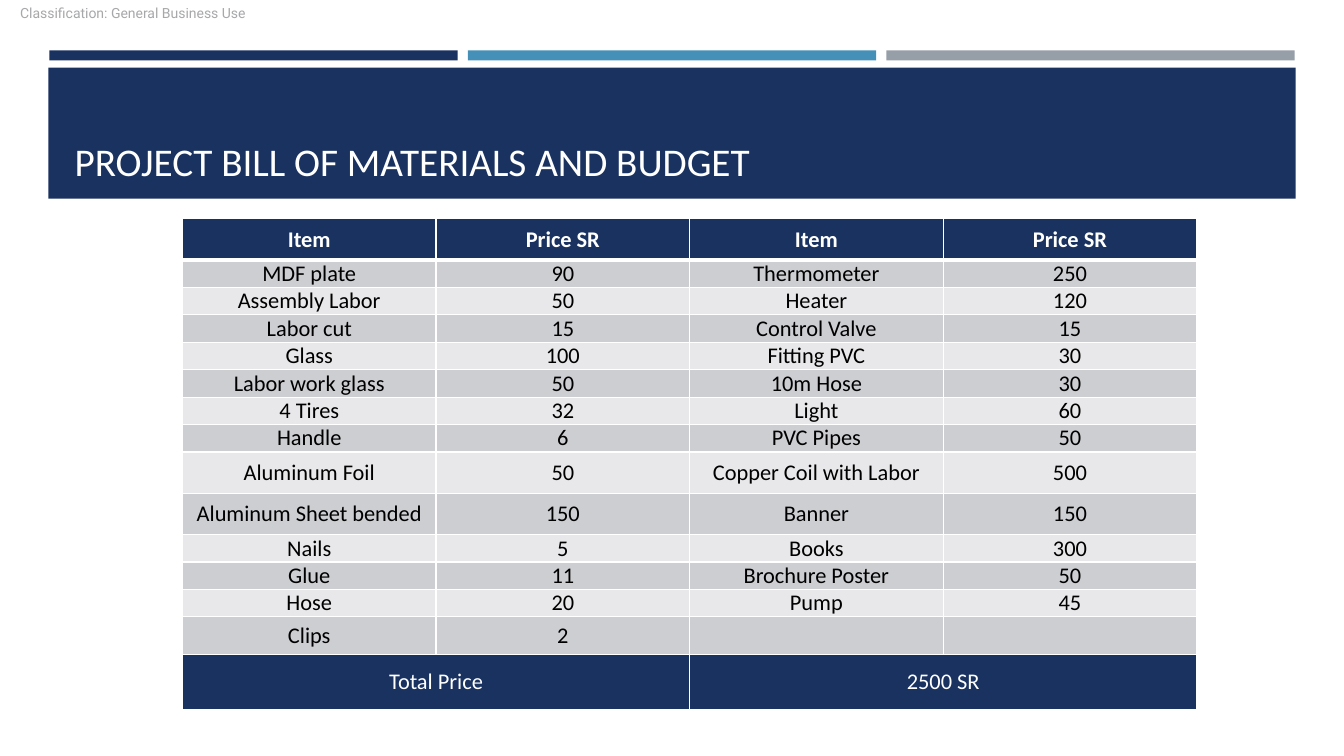
from lxml.etree import SubElement
from pptx import Presentation
from pptx.dml.color import RGBColor
from pptx.enum.shapes import MSO_SHAPE
from pptx.enum.text import MSO_ANCHOR, PP_ALIGN
from pptx.oxml.ns import qn
from pptx.util import Inches, Pt

COLORS = {
    "navy": "1A3260", "blue": "4590B8", "gray": "969FA7", "white": "FFFFFF",
    "black": "000000", "label": "A7A8AA", "dark_row": "CDCED2", "light_row": "E8E8EA",
}
HEADER = ["Item", "Price SR"] * 2
MATERIALS = [
    ("MDF plate", 90, "Thermometer", 250),
    ("Assembly Labor", 50, "Heater", 120),
    ("Labor cut", 15, "Control Valve", 15),
    ("Glass", 100, "Fitting PVC", 30),
    ("Labor work glass", 50, "10m Hose", 30),
    ("4 Tires", 32, "Light", 60),
    ("Handle", 6, "PVC Pipes", 50),
    ("Aluminum Foil", 50, "Copper Coil with Labor", 500),
    ("Aluminum Sheet bended", 150, "Banner", 150),
    ("Nails", 5, "Books", 300),
    ("Glue", 11, "Brochure Poster", 50),
    ("Hose", 20, "Pump", 45),
    ("Clips", 2, "", ""),
]
TOTAL = ("Total Price", "", "2500 SR", "")
ROW_HEIGHTS = [0.41] + [0.27] * 7 + [0.41] * 2 + [0.27] * 3 + [0.37, 0.55]


def rgb(name):
    """Return the named colour."""
    return RGBColor.from_string(COLORS[name])


def style_font(p, size, color, name="Calibri", bold=False):
    """Set the font of a whole paragraph."""
    p.font.name, p.font.size, p.font.bold = name, Pt(size), bold
    p.font.color.rgb = rgb(color)


def add_bar(s, left, top, width, height, color):
    """Add a plain filled rectangle."""
    sp = s.shapes.add_shape(MSO_SHAPE.RECTANGLE, Inches(left), Inches(top),
                            Inches(width), Inches(height))
    sp.shadow.inherit = False
    sp.fill.solid()
    sp.fill.fore_color.rgb = rgb(color)
    sp.line.fill.background()


def add_label(s, text):
    """Add the classification label in the top left corner."""
    tf = s.shapes.add_textbox(0, 0, Inches(2.67), Inches(0.26)).text_frame
    tf.word_wrap = True
    tf.margin_left = Inches(0.2)
    tf.margin_top = tf.margin_right = tf.margin_bottom = 0
    tf.vertical_anchor = MSO_ANCHOR.MIDDLE
    tf.text = text
    style_font(tf.paragraphs[0], 10, "label", "Roboto")


def set_title(s, text):
    """Place the title on top of its band."""
    sp = s.shapes.title
    sp.left, sp.top = Inches(0.64), Inches(0.77)
    sp.width, sp.height = Inches(12.06), Inches(1.11)
    tf = sp.text_frame
    tf.text = text
    tf.vertical_anchor = MSO_ANCHOR.BOTTOM
    p = tf.paragraphs[0]
    p.alignment = PP_ALIGN.LEFT
    style_font(p, 28, "white")
    sp.element.getparent().append(sp.element)


def set_borders(cell, widths):
    """Draw white cell borders, given widths in points by side."""
    tc_pr = cell._tc.get_or_add_tcPr()
    for i, (side, width) in enumerate(widths.items()):
        ln = SubElement(tc_pr, qn(f"a:ln{side}"), w=str(Pt(width)))
        fill = SubElement(ln, qn("a:solidFill"))
        SubElement(fill, qn("a:srgbClr"), val=COLORS["white"])
        tc_pr.insert(i, ln)


def fill_cell(cell, text, fill, color, bold, widths):
    """Write and format one table cell."""
    cell.text = str(text)
    cell.vertical_anchor = MSO_ANCHOR.MIDDLE
    cell.margin_left = cell.margin_right = Inches(0.06)
    cell.margin_top = cell.margin_bottom = 0
    p = cell.text_frame.paragraphs[0]
    p.alignment = PP_ALIGN.CENTER
    style_font(p, 16, color, bold=bold)
    cell.fill.solid()
    cell.fill.fore_color.rgb = rgb(fill)
    set_borders(cell, widths)


def add_budget_table(s):
    """Add the bill of materials with its header and total rows."""
    rows = [HEADER, *MATERIALS, TOTAL]
    last = len(rows) - 1
    table = s.shapes.add_table(len(rows), 4, Inches(1.81), Inches(2.17),
                               Inches(10.06), Inches(sum(ROW_HEIGHTS))).table
    for column in table.columns:
        column.width = Inches(2.515)
    for i, (row, height) in enumerate(zip(rows, ROW_HEIGHTS)):
        table.rows[i].height = Inches(height)
        banded = "dark_row" if i % 2 else "light_row"
        fill, color = ("navy", "white") if i in (0, last) else (banded, "black")
        widths = {"L": 1, "R": 1, "T": 3 if i == 1 else 1, "B": 3 if i == 0 else 1}
        for j, text in enumerate(row):
            fill_cell(table.cell(i, j), text, fill, color, i == 0, widths)
    for j in (0, 2):
        table.cell(last, j).merge(table.cell(last, j + 1))


def main():
    """Build the budget slide."""
    prs = Presentation()
    prs.slide_width, prs.slide_height = Inches(13.33), Inches(7.5)
    s = prs.slides.add_slide(prs.slide_layouts[5])
    for i, color in enumerate(("navy", "blue", "gray")):
        add_bar(s, 0.49 + 4.15 * i, 0.5, 4.05, 0.1, color)
    add_label(s, "Classification: General Business Use")
    add_bar(s, 0.48, 0.67, 12.37, 1.3, "navy")
    set_title(s, "PROJECT BILL OF MATERIALS AND BUDGET")
    add_budget_table(s)
    prs.save("out.pptx")


if __name__ == "__main__":
    main()
